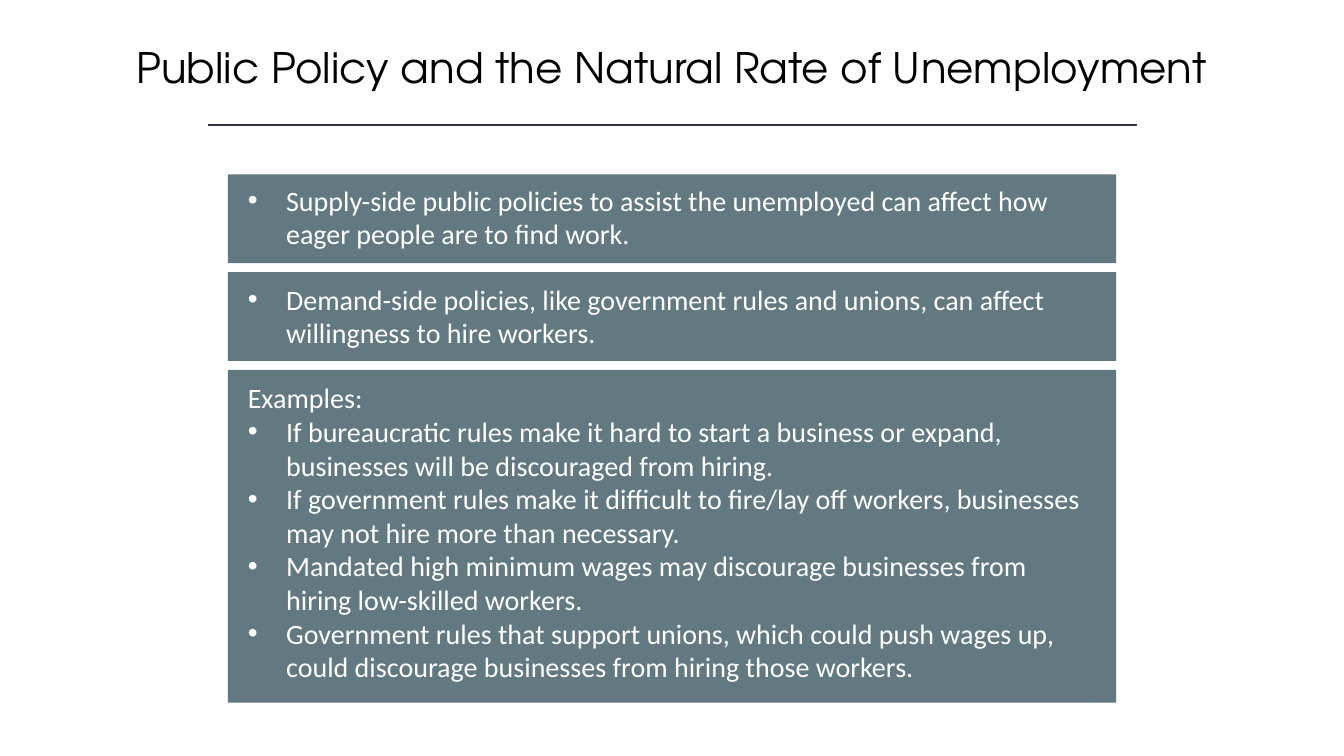
from dataclasses import dataclass

from lxml.etree import SubElement
from pptx import Presentation
from pptx.dml.color import RGBColor
from pptx.enum.shapes import MSO_CONNECTOR, MSO_SHAPE
from pptx.enum.text import MSO_ANCHOR as ANCHOR, PP_ALIGN as ALIGN
from pptx.oxml.ns import qn
from pptx.util import Inches, Pt

COLORS = {"title": "000000", "rule": "323542", "panel": "627981", "text": "FFFFFF"}
PANEL_LEFT, PANEL_WIDTH = 2.26, 8.81
TEXT_LEFT, TEXT_WIDTH = 2.36, 8.54
INDENT = 0.38


@dataclass
class Panel:
    top: float
    height: float
    text_top: float
    text_height: float
    bullets: list[str]
    heading: str = ""


PANELS = [
    Panel(1.73, 0.88, 1.77, 0.77, [
        "Supply-side public policies to assist the unemployed can affect how eager people are to find work.",
    ]),
    Panel(2.7, 0.88, 2.75, 0.77, [
        "Demand-side policies, like government rules and unions, can affect willingness to hire workers.",
    ]),
    Panel(3.67, 3.3, 3.73, 3.13, [
        "If bureaucratic rules make it hard to start a business or expand, "
        "businesses will be discouraged from hiring.",
        "If government rules make it difficult to fire/lay off workers, "
        "businesses may not hire more than necessary.",
        "Mandated high minimum wages may discourage businesses from hiring low-skilled workers.",
        "Government rules that support unions, which could push wages up, "
        "could discourage businesses from hiring those workers.",
    ], "Examples:"),
]


def color(name: str) -> RGBColor:
    return RGBColor.from_string(COLORS[name])


def add_run(p, text: str, size: float, font: str, color_name: str) -> None:
    r = p.add_run()
    r.text = text
    r.font.size = Pt(size)
    r.font.name = font
    r.font.color.rgb = color(color_name)


def add_title(s, text: str) -> None:
    sp = s.shapes.title
    sp.left, sp.top, sp.width, sp.height = map(Inches, (1.24, 0.36, 10.85, 0.61))
    tf = sp.text_frame
    tf.word_wrap = True
    tf.vertical_anchor = ANCHOR.MIDDLE
    p = tf.paragraphs[0]
    p.alignment = ALIGN.CENTER
    add_run(p, text, 30, "TeX Gyre Adventor", "title")


def add_rule(s) -> None:
    rule = s.shapes.add_connector(
        MSO_CONNECTOR.STRAIGHT, Inches(2.06), Inches(1.24), Inches(11.28), Inches(1.24))
    rule.line.color.rgb = color("rule")
    rule.line.width = Pt(1)
    SubElement(rule._element.spPr, qn("a:effectLst"))


def add_rect(group, left: float, top: float, width: float, height: float):
    sp = group.shapes.add_shape(
        MSO_SHAPE.RECTANGLE, Inches(left), Inches(top), Inches(width), Inches(height))
    sp.shadow.inherit = False
    sp.fill.solid()
    sp.fill.fore_color.rgb = color("panel")
    sp.line.fill.background()
    return sp


def add_bullet(p) -> None:
    pPr = p._p.get_or_add_pPr()
    pPr.set("marL", str(Inches(INDENT)))
    pPr.set("indent", str(-Inches(INDENT)))
    SubElement(pPr, qn("a:buFont"), typeface="Arial")
    SubElement(pPr, qn("a:buChar"), char="•")


def add_panel(s, panel: Panel) -> None:
    group = s.shapes.add_group_shape()
    add_rect(group, PANEL_LEFT, panel.top, PANEL_WIDTH, panel.height)
    sp = add_rect(group, TEXT_LEFT, panel.text_top, TEXT_WIDTH, panel.text_height)
    tf = sp.text_frame
    tf.word_wrap = True
    tf.vertical_anchor = ANCHOR.TOP
    lines = ([panel.heading] if panel.heading else []) + panel.bullets
    for i, line in enumerate(lines):
        p = tf.add_paragraph() if i else tf.paragraphs[0]
        p.alignment = ALIGN.LEFT
        if line != panel.heading:
            add_bullet(p)
        add_run(p, line, 20, "Calibri", "text")


def main() -> None:
    """Build the slide on public policy and unemployment."""
    prs = Presentation()
    prs.slide_width, prs.slide_height = Inches(13.33), Inches(7.5)
    s = prs.slides.add_slide(prs.slide_layouts[5])
    add_title(s, "Public Policy and the Natural Rate of Unemployment")
    add_rule(s)
    for panel in PANELS:
        add_panel(s, panel)
    prs.save("out.pptx")


if __name__ == "__main__":
    main()
